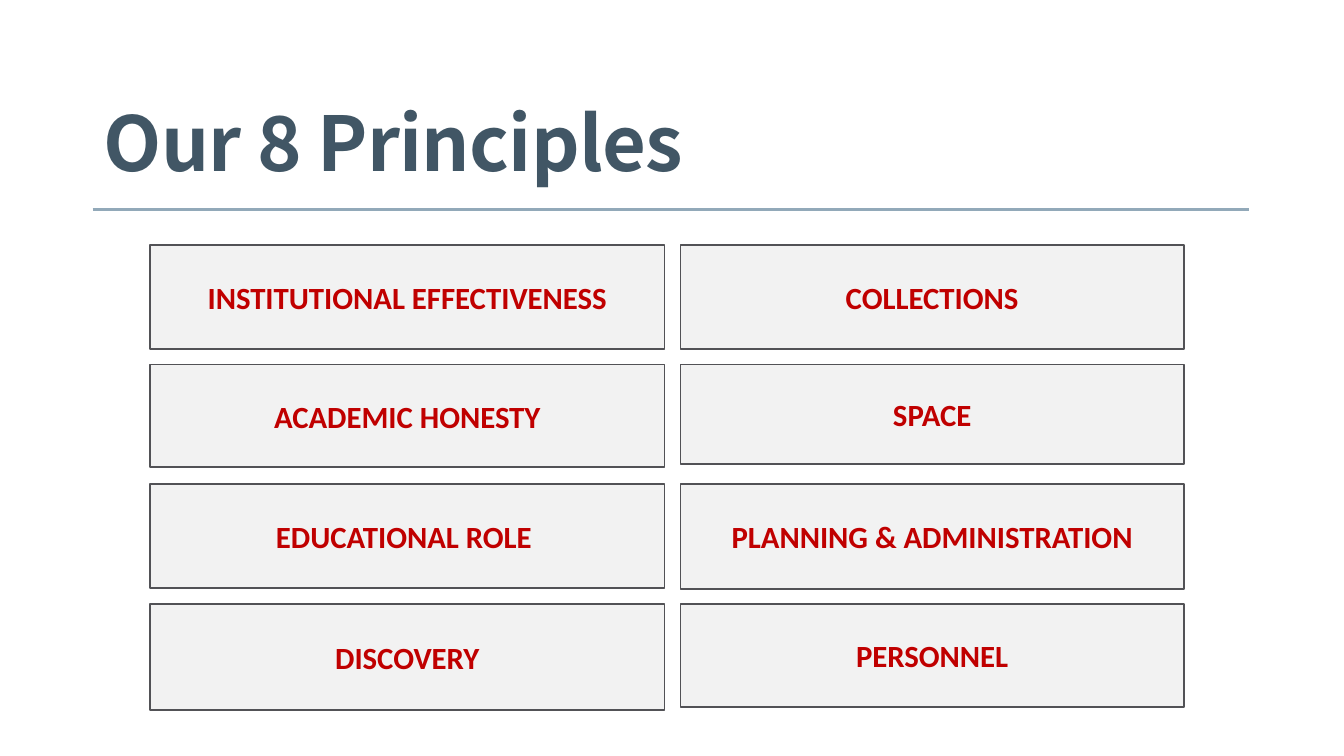
from lxml import etree
from pptx import Presentation
from pptx.dml.color import RGBColor
from pptx.enum.shapes import MSO_CONNECTOR, MSO_SHAPE
from pptx.enum.text import MSO_ANCHOR, PP_ALIGN
from pptx.oxml.ns import qn
from pptx.util import Inches, Pt

RECTANGLE = MSO_SHAPE.RECTANGLE
STRAIGHT = MSO_CONNECTOR.STRAIGHT
BOTTOM, MIDDLE = MSO_ANCHOR.BOTTOM, MSO_ANCHOR.MIDDLE
CENTER = PP_ALIGN.CENTER

SLATE = RGBColor(0x41, 0x56, 0x65)
BLUE_GREY = RGBColor(0x92, 0xA9, 0xB9)
PALE_GREY = RGBColor(0xF2, 0xF2, 0xF2)
DARK_GREY = RGBColor(0x52, 0x52, 0x56)
RED = RGBColor(0xC0, 0x00, 0x00)

TITLE = "Our 8 Principles"
# Each column: left, width, then its principles with their box heights
COLUMNS = [
    (1.49, 5.1, [
        ("INSTITUTIONAL EFFECTIVENESS", 1.03),
        ("ACADEMIC HONESTY", 1.02),
        ("EDUCATIONAL ROLE ", 1.03),
        ("DISCOVERY", 1.05),
    ]),
    (6.75, 4.99, [
        ("COLLECTIONS", 1.03),
        ("SPACE", 0.99),
        ("PLANNING & ADMINISTRATION", 1.04),
        ("PERSONNEL", 1.02),
    ]),
]
FIRST_TOP, ROW_PITCH = 2.43, 1.187


def write(shape, text, font_name, size, color, anchor):
    """Put one bold paragraph in the shape and return the paragraph."""
    frame = shape.text_frame
    frame.word_wrap = True
    frame.vertical_anchor = anchor
    frame.text = text
    paragraph = frame.paragraphs[0]
    font = paragraph.runs[0].font
    font.name, font.size, font.bold = font_name, Pt(size), True
    font.color.rgb = color
    return paragraph


def add_principle(slide, name, left, top, width, height):
    box = slide.shapes.add_shape(
        RECTANGLE, Inches(left), Inches(top), Inches(width), Inches(height))
    box.shadow.inherit = False
    box.fill.solid()
    box.fill.fore_color.rgb = PALE_GREY
    box.line.color.rgb = DARK_GREY
    box.line.width = Pt(1.25)
    write(box, name, "Calibri", 22, RED, MIDDLE).alignment = CENTER


def add_heading(slide):
    heading = slide.shapes.add_textbox(
        Inches(0.93), Inches(0.31), Inches(11.12), Inches(1.59))
    paragraph = write(heading, TITLE, "Noto Sans CJK SC", 54, SLATE, BOTTOM)
    paragraph.line_spacing = 0.85
    paragraph.runs[0].font._element.set("spc", "-50")

    rule = slide.shapes.add_connector(
        STRAIGHT, Inches(0.92), Inches(2.08), Inches(12.39), Inches(2.08))
    rule.line.color.rgb = BLUE_GREY
    rule.line.width = Pt(1.75)
    etree.SubElement(rule._element.spPr, qn("a:effectLst"))


def main():
    deck = Presentation()
    deck.slide_width, deck.slide_height = Inches(13.33), Inches(7.5)
    slide = deck.slides.add_slide(deck.slide_layouts[6])
    for left, width, principles in COLUMNS:
        for row, (name, height) in enumerate(principles):
            top = FIRST_TOP + row * ROW_PITCH
            add_principle(slide, name, left, top, width, height)
    add_heading(slide)
    deck.save("out.pptx")


if __name__ == "__main__":
    main()
